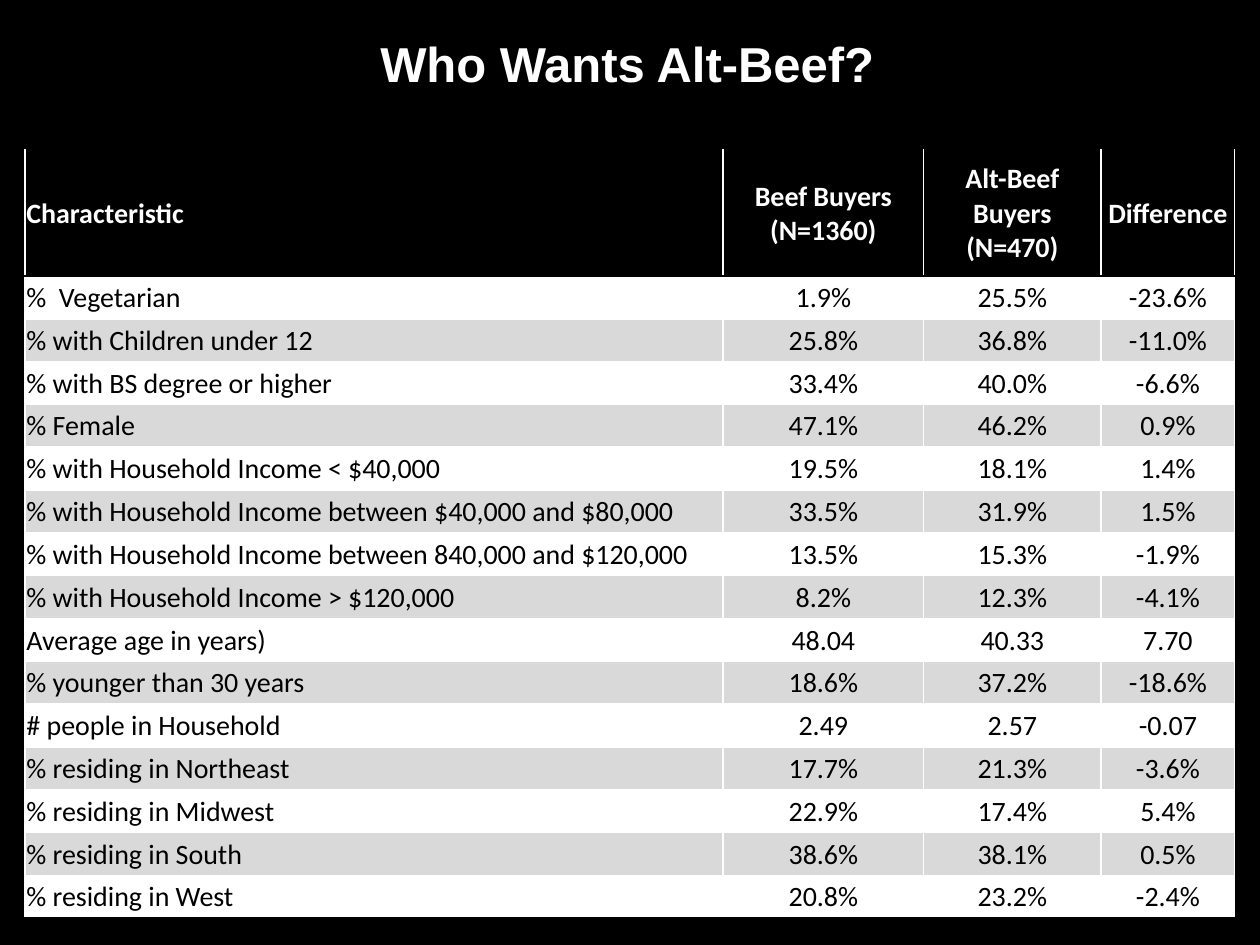
from lxml import etree
from pptx import Presentation, util as u
from pptx.dml.color import RGBColor
from pptx.enum import text
from pptx.oxml.ns import qn

# Content
TITLE = "Who Wants Alt-Beef?"
ROWS = [
    ("Characteristic", "Beef Buyers (N=1360)", "Alt-Beef Buyers (N=470)", "Difference"),
    ("%  Vegetarian", "1.9%", "25.5%", "-23.6%"),
    ("% with Children under 12", "25.8%", "36.8%", "-11.0%"),
    ("% with BS degree or higher", "33.4%", "40.0%", "-6.6%"),
    ("% Female", "47.1%", "46.2%", "0.9%"),
    ("% with Household Income < $40,000", "19.5%", "18.1%", "1.4%"),
    ("% with Household Income between $40,000 and $80,000", "33.5%", "31.9%", "1.5%"),
    ("% with Household Income between 840,000 and $120,000", "13.5%", "15.3%", "-1.9%"),
    ("% with Household Income > $120,000", "8.2%", "12.3%", "-4.1%"),
    ("Average age in years)", "48.04", "40.33", "7.70"),
    ("% younger than 30 years", "18.6%", "37.2%", "-18.6%"),
    ("# people in Household", "2.49", "2.57", "-0.07"),
    ("% residing in Northeast", "17.7%", "21.3%", "-3.6%"),
    ("% residing in Midwest", "22.9%", "17.4%", "5.4%"),
    ("% residing in South", "38.6%", "38.1%", "0.5%"),
    ("% residing in West", "20.8%", "23.2%", "-2.4%"),
]
COLORS = {"black": "000000", "white": "FFFFFF", "band": "D9D9D9"}

# Layout, in inches
COL_WIDTHS = [5.54, 1.59, 1.41, 1.06]
HEAD_H, ROW_H = 1, 0.34
LEFT, TOP = 0.2, 1.19
LAST = len(ROWS) - 1


def rgb(name):
    return RGBColor.from_string(COLORS[name])


def set_font(p, name, size, color, bold):
    p.font.name, p.font.size, p.font.bold = name, u.Pt(size), bold
    p.font.color.rgb = rgb(color)


def set_borders(cell, top, bottom):
    tc_pr = cell._tc.get_or_add_tcPr()
    for side, color in (("L", "white"), ("R", "white"), ("T", top), ("B", bottom)):
        ln = etree.SubElement(tc_pr, qn(f"a:ln{side}"), w=str(u.Pt(1)))
        fill = etree.SubElement(ln, qn("a:solidFill"))
        etree.SubElement(fill, qn("a:srgbClr"), val=COLORS[color])


def style_cell(cell, r, c):
    head = r == 0
    set_borders(cell, "black" if r <= 1 else "white",
                "black" if r in (0, LAST) else "white")
    cell.fill.solid()
    cell.fill.fore_color.rgb = rgb("black" if head else "white" if r % 2 else "band")
    cell.vertical_anchor = text.MSO_ANCHOR.MIDDLE
    cell.margin_left = cell.margin_right = cell.margin_top = u.Inches(0.01)
    cell.margin_bottom = 0
    p = cell.text_frame.paragraphs[0]
    p.alignment = text.PP_ALIGN.CENTER if c else text.PP_ALIGN.LEFT
    set_font(p, "Calibri", 16, "white" if head else "black", head)


prs = Presentation()
prs.slide_width, prs.slide_height = u.Inches(10), u.Inches(7.5)
s = prs.slides.add_slide(prs.slide_layouts[6])
s.background.fill.solid()
s.background.fill.fore_color.rgb = rgb("black")

# Title
tf = s.shapes.add_textbox(*map(u.Inches, (2.92, 0.22, 4.17, 0.57))).text_frame
tf.word_wrap = False
tf.auto_size = text.MSO_AUTO_SIZE.SHAPE_TO_FIT_TEXT
tf.text = TITLE
set_font(tf.paragraphs[0], "Arial", 28, "white", True)

# Buyer comparison table
size = (sum(COL_WIDTHS), HEAD_H + ROW_H * LAST)
table = s.shapes.add_table(len(ROWS), len(COL_WIDTHS),
                           *map(u.Inches, (LEFT, TOP, *size))).table
for col, width in zip(table.columns, COL_WIDTHS):
    col.width = u.Inches(width)
for r, values in enumerate(ROWS):
    table.rows[r].height = u.Inches(ROW_H if r else HEAD_H)
    for c, value in enumerate(values):
        cell = table.cell(r, c)
        cell.text = value
        style_cell(cell, r, c)

prs.save("out.pptx")
